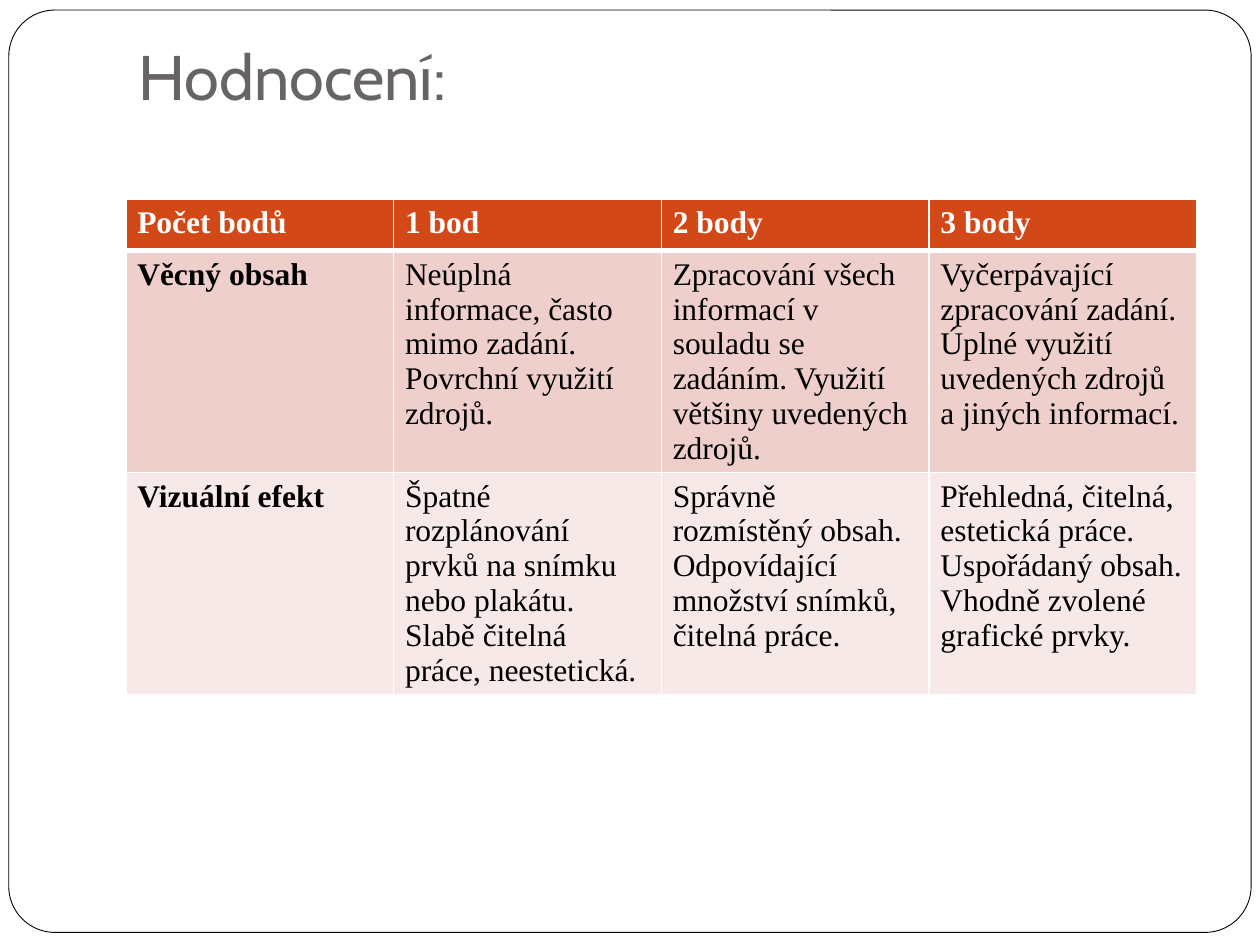
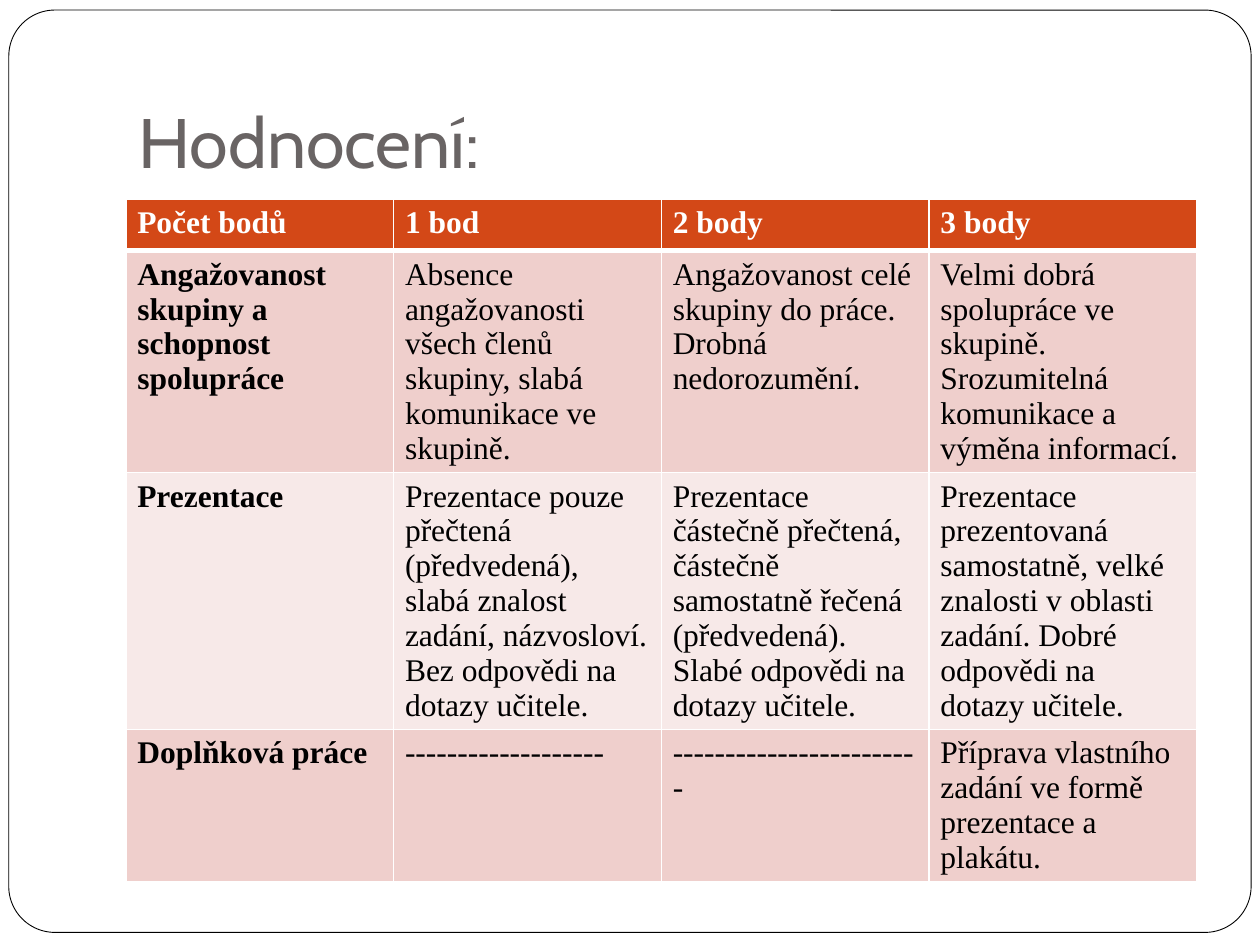
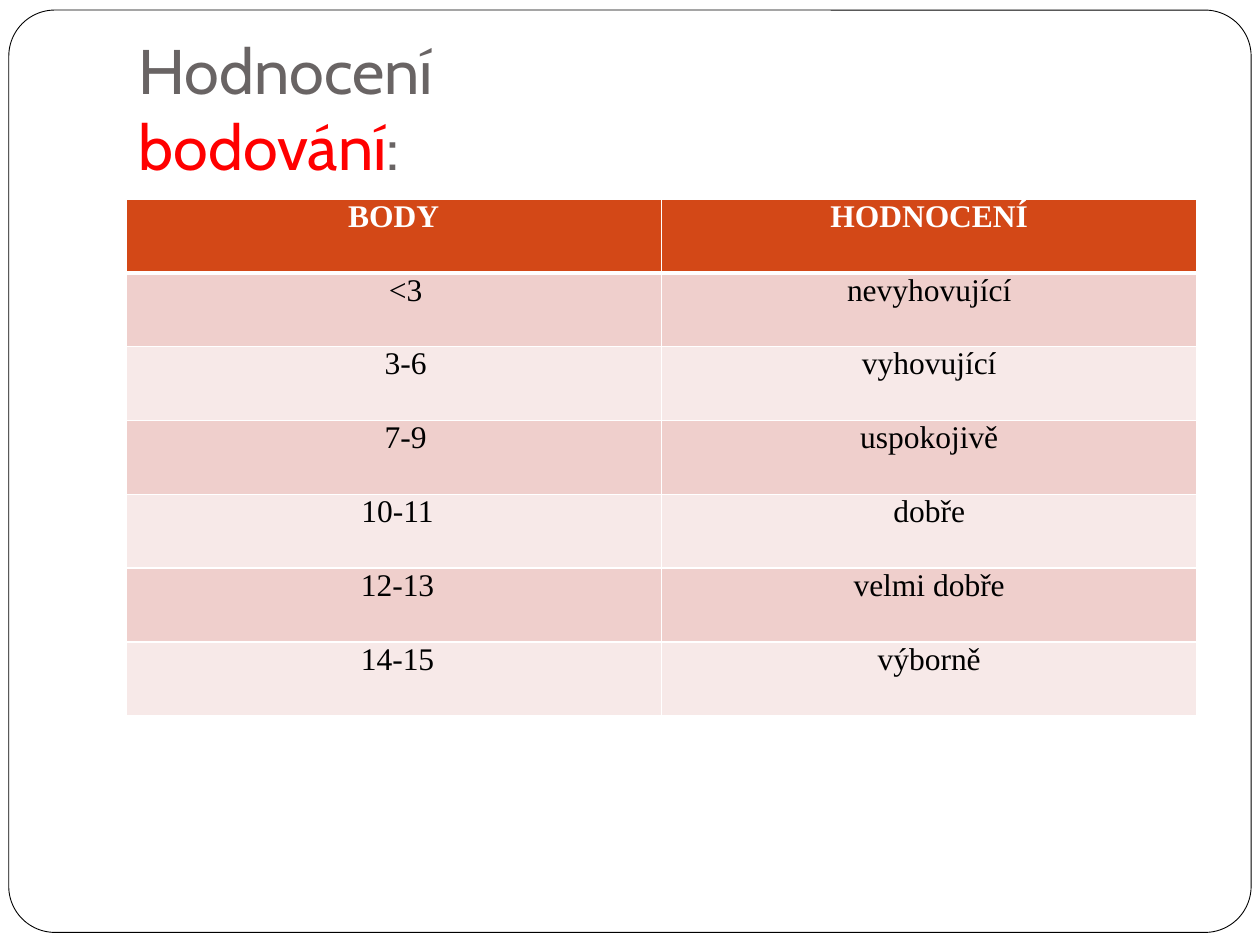
from lxml import etree
from pptx import Presentation
from pptx import util as u
from pptx.dml.color import RGBColor
from pptx.enum import shapes, text
from pptx.oxml.ns import qn

COLORS = {
    "paper": "FFFFFF", "outline": "000000", "heading": "696464", "accent": "FF0000",
    "header": "D34817", "odd": "EFCFCC", "even": "F7E9E8", "ink": "000000",
}
POINTS = ["Počet bodů", "1 bod", "2 body", "3 body"]
CONTENT = [
    POINTS,
    ["Věcný obsah",
     "Neúplná informace, často mimo zadání. Povrchní využití zdrojů.",
     "Zpracování všech informací v souladu se zadáním. Využití většiny uvedených zdrojů.",
     "Vyčerpávající zpracování zadání. Úplné využití uvedených zdrojů a jiných informací."],
    ["Vizuální efekt",
     "Špatné rozplánování prvků na snímku nebo plakátu. Slabě čitelná práce, neestetická.",
     "Správně rozmístěný obsah. Odpovídající množství snímků, čitelná práce.",
     "Přehledná, čitelná, estetická práce. Uspořádaný obsah. Vhodně zvolené grafické prvky."],
]
TEAMWORK = [
    POINTS,
    ["Angažovanost skupiny a schopnost spolupráce",
     "Absence angažovanosti všech členů skupiny, slabá komunikace ve skupině.",
     "Angažovanost celé skupiny do práce. Drobná nedorozumění.",
     "Velmi dobrá spolupráce ve skupině. Srozumitelná komunikace a výměna informací."],
    ["Prezentace",
     "Prezentace pouze přečtená (předvedená), slabá znalost zadání, názvosloví. "
     "Bez odpovědi na dotazy učitele.",
     "Prezentace částečně přečtená, částečně samostatně řečená (předvedená). "
     "Slabé odpovědi na dotazy učitele.",
     "Prezentace prezentovaná samostatně, velké znalosti v oblasti zadání. "
     "Dobré odpovědi na dotazy učitele."],
    ["Doplňková práce", "-" * 19, "-" * 24,
     "Příprava vlastního zadání ve formě prezentace a plakátu."],
]
GRADES = [
    ["BODY", "HODNOCENÍ"],
    ["<3", "nevyhovující"],
    ["3-6", "vyhovující"],
    ["7-9", "uspokojivě"],
    ["10-11", "dobře"],
    ["12-13", "velmi dobře"],
    ["14-15", "výborně"],
]
GRADE_INDENTS = [0, 0.19, 0.19, 0.19, 0.06, 0.06, 0.06]


class Deck:
    """Holds the style and the current slide, on a grid of 100 columns by 75 rows."""

    def __init__(self):
        self.show = Presentation()
        self.show.slide_width, self.show.slide_height = u.Inches(10), u.Inches(7.5)
        self.slide = None

    def box(self, column, row, columns, rows):
        """Turn grid units into left, top, width and height."""
        across, down = self.show.slide_width / 100, self.show.slide_height / 75
        return [int(n) for n in (column * across, row * down, columns * across, rows * down)]

    def open(self):
        """Start a slide, framing the master the first time."""
        first = self.slide is None
        self.slide = self.show.slides.add_slide(self.show.slide_layouts[5])
        if first:
            self.frame()

    def frame(self):
        """Put the rounded outline behind everything on the master."""
        outline = self.slide.shapes.add_shape(
            shapes.MSO_SHAPE.ROUNDED_RECTANGLE, *self.box(0.7, 0.8, 98.6, 73.2))
        outline.adjustments[0] = 0.05
        outline.shadow.inherit = False
        outline.fill.solid()
        outline.fill.fore_color.rgb = RGBColor.from_string(COLORS["paper"])
        outline.line.color.rgb = RGBColor.from_string(COLORS["outline"])
        outline.line.width = u.Pt(0.5)
        outline.element.nvSpPr.cNvPr.set("id", "20")
        self.show.slide_master.shapes.element.insert(2, outline.element)

    def run(self, paragraph, words, size, font, color, bold=False):
        """Add one formatted run."""
        run = paragraph.add_run()
        run.text = words
        run.font.size, run.font.name, run.font.bold = u.Pt(size), font, bold
        run.font.color.rgb = RGBColor.from_string(COLORS[color])

    def title(self, lines, size=36, raised=False):
        """Fill the title with lines of (words, colour) runs."""
        heading = self.slide.shapes.title
        heading.left, heading.top, heading.width, heading.height = self.box(10, 3, 85, 12.5)
        frame = heading.text_frame
        frame.auto_size = text.MSO_AUTO_SIZE.NONE
        frame.word_wrap = True
        frame.vertical_anchor = text.MSO_ANCHOR.TOP if raised else text.MSO_ANCHOR.BOTTOM
        frame.margin_top = u.Inches(0 if raised else 0.05)
        frame.margin_bottom = u.Inches(0.1)
        paragraph = frame.paragraphs[0]
        paragraph.alignment = text.PP_ALIGN.LEFT
        for number, line in enumerate(lines):
            if number:
                paragraph.add_line_break()
            for words, color in line:
                self.run(paragraph, words, size, "Cabin", color)

    def borders(self, cell, top, bottom):
        """Draw the white rules around a cell."""
        properties = cell._tc.get_or_add_tcPr()
        widths = {"a:lnL": 1, "a:lnR": 1, "a:lnT": top, "a:lnB": bottom}
        for place, (side, width) in enumerate(widths.items()):
            rule = etree.Element(qn(side), w=str(u.Pt(width)))
            fill = etree.SubElement(rule, qn("a:solidFill"))
            etree.SubElement(fill, qn("a:srgbClr"), val=COLORS["paper"])
            properties.insert(place, rule)

    def table(self, rows, height, inset, labels=False, indents=None):
        """Add a banded table; indents shift the centred first column."""
        area = self.box(10, 15.8, 85, height * len(rows))
        grid = self.slide.shapes.add_table(len(rows), len(rows[0]), *area).table
        grid.horz_banding = False
        for r, row in enumerate(rows):
            for c, words in enumerate(row):
                cell = grid.cell(r, c)
                shift = indents[r] if indents and c == 0 else 0
                cell.margin_left = u.Inches(inset[0] + shift)
                cell.margin_right = u.Inches(inset[0])
                cell.margin_top = cell.margin_bottom = u.Inches(inset[1])
                cell.fill.solid()
                band = "header" if r == 0 else "odd" if r % 2 else "even"
                cell.fill.fore_color.rgb = RGBColor.from_string(COLORS[band])
                self.borders(cell, 3 if r == 1 else 1, 3 if r == 0 else 1)
                paragraph = cell.text_frame.paragraphs[0]
                if indents:
                    paragraph.alignment = text.PP_ALIGN.CENTER
                self.run(paragraph, words, 18, "Times New Roman",
                         "ink" if r else "paper", r == 0 or (labels and c == 0))


def main():
    """Build the three slides."""
    deck = Deck()
    heading = [[("Hodnocení:", "heading")]]
    deck.open()
    deck.title(heading, raised=True)
    deck.table(CONTENT, 4.1, (0.09, 0.05), labels=True)
    deck.open()
    deck.title(heading, size=40)
    deck.table(TEAMWORK, 4.1, (0.09, 0.05), labels=True)
    deck.open()
    deck.title([[("Hodnocení", "heading")], [("bodování", "accent"), (":", "heading")]])
    deck.table(GRADES, 5.86, (0.07, 0), indents=GRADE_INDENTS)
    deck.show.save("out.pptx")


if __name__ == "__main__":
    main()
